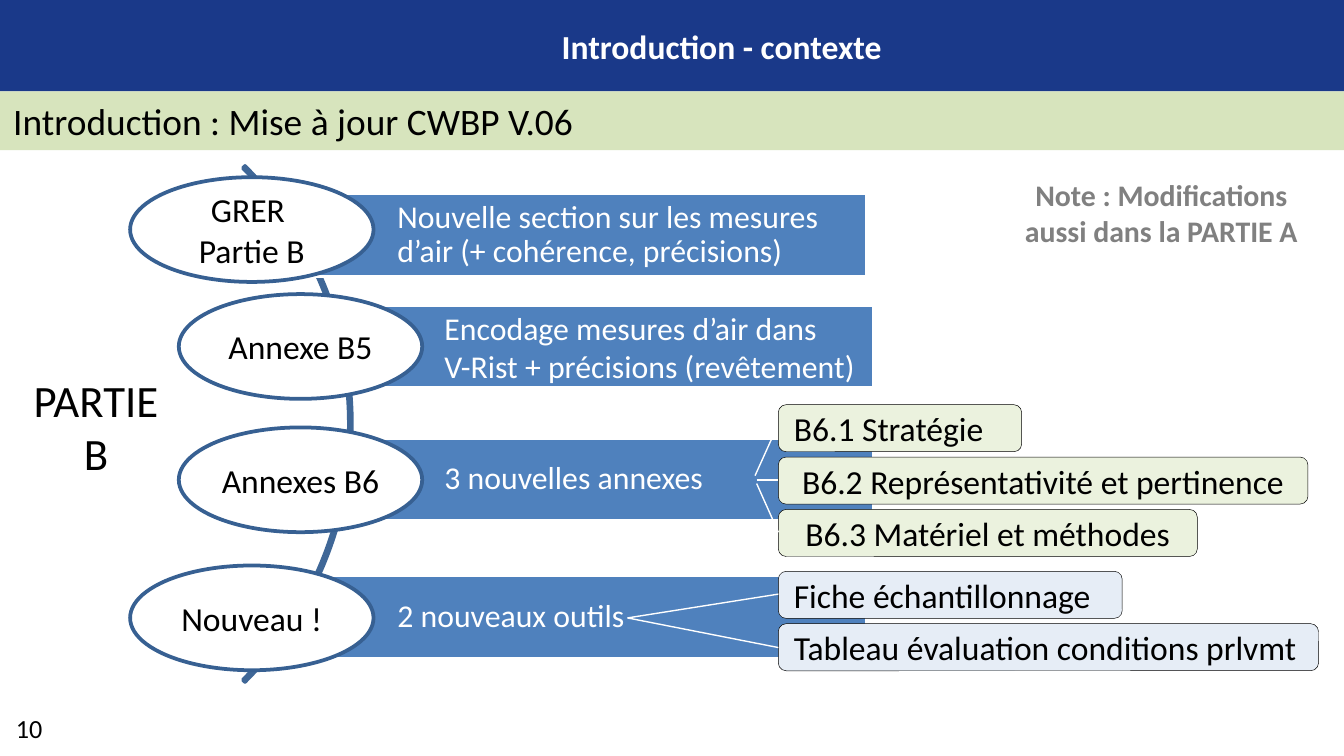
from dataclasses import dataclass

from lxml import etree
from pptx import Presentation
from pptx.dml.color import RGBColor
from pptx.enum.shapes import MSO_CONNECTOR as Connector, MSO_SHAPE as Preset
from pptx.enum.text import MSO_ANCHOR as Anchor, PP_ALIGN as Align
from pptx.oxml.ns import qn
from pptx.util import Cm, Pt

FONT = "Calibri"
BLACK, WHITE, NAVY, BLUE = "000000", "FFFFFF", "1A3989", "4F81BD"
LIME, GREEN, PALE_BLUE = "D7E4BD", "EBF2DE", "E6EDF6"
ARC_LINE, OVAL_LINE, GREY = "3F6797", "376092", "808080"

OVAL_WIDTH, OVAL_HEIGHT, BAR_HEIGHT = 4.6, 1.98, 1.57
CHIP_LEFT, CHIP_HEIGHT, CHIP_STEP = 14.71, 0.89, 0.99
NO_INSETS = (0, 0, 0, 0)
BAR_INSETS = (1.9, 0.12, 0.12, 0.12)


@dataclass
class Style:
    size: float
    color: str = BLACK
    bold: bool = False
    align: Align = Align.LEFT
    anchor: Anchor = Anchor.MIDDLE
    insets: tuple = (0.25, 0.13, 0.25, 0.13)
    spacing: float = 1.0
    wrap: bool = True


@dataclass
class Step:
    oval_left: float
    oval_top: float
    oval_lines: list
    bar_left: float
    bar_top: float
    bar_width: float
    bar_lines: list
    spacing: float = 0.9


@dataclass
class ChipGroup:
    top: float
    fill: str
    chips: list  # (label, width, alignment)


STEPS = [
    Step(2.46, 3.35, ["GRER ", "Partie B"], 5.61, 3.66, 10.77,
         ["Nouvelle section sur les mesures d’air (+ cohérence, précisions)"]),
    Step(3.38, 5.56, ["Annexe B5"], 6.5, 5.77, 10.01,
         ["Encodage mesures d’air dans", "V-Rist + précisions (revêtement)"], 1.0),
    Step(3.38, 8.08, ["Annexes B6"], 6.5, 8.28, 10.01, ["3 nouvelles annexes"]),
    Step(2.46, 10.69, ["Nouveau !"], 5.61, 10.88, 10.77, ["2 nouveaux outils"]),
]
CHIP_GROUPS = [
    ChipGroup(7.65, GREEN, [
        ("B6.1 Stratégie", 4.6, Align.LEFT),
        ("B6.2 Représentativité et pertinence", 10.01, Align.CENTER),
        ("B6.3 Matériel et méthodes", 7.92, Align.CENTER)]),
    ChipGroup(10.8, PALE_BLUE, [
        ("Fiche échantillonnage", 6.5, Align.LEFT),
        ("Tableau évaluation conditions prlvmt", 10.21, Align.LEFT)]),
]
BRANCHES = [
    (14.27, 8.99, 14.68, 8.08), (14.3, 9.07, 14.71, 9.07), (14.3, 9.14, 14.71, 10.06),
    (11.86, 11.68, 14.71, 11.23), (11.86, 11.68, 14.71, 12.24),
]


def rgb(value: str) -> RGBColor:
    return RGBColor.from_string(value)


def write(shape, lines: list, style: Style) -> None:
    frame = shape.text_frame
    frame.word_wrap = style.wrap
    frame.vertical_anchor = style.anchor
    (frame.margin_left, frame.margin_top,
     frame.margin_right, frame.margin_bottom) = map(Cm, style.insets)
    for index, line in enumerate(lines):
        paragraph = frame.add_paragraph() if index else frame.paragraphs[0]
        paragraph.alignment = style.align
        paragraph.line_spacing = style.spacing
        run = paragraph.add_run()
        run.text = line
        run.font.name = FONT
        run.font.size = Pt(style.size)
        run.font.bold = style.bold
        run.font.color.rgb = rgb(style.color)


def add_shape(slide, preset: Preset, box: tuple, fill: str = "",
              line: str = "", line_width: float = 0):
    shape = slide.shapes.add_shape(preset, *map(Cm, box))
    shape.shadow.inherit = False
    if fill:
        shape.fill.solid()
        shape.fill.fore_color.rgb = rgb(fill)
    else:
        shape.fill.background()
    if line:
        shape.line.color.rgb = rgb(line)
        shape.line.width = Pt(line_width)
    else:
        shape.line.fill.background()
    return shape


def add_text(slide, box: tuple, lines: list, style: Style) -> None:
    write(slide.shapes.add_textbox(*map(Cm, box)), lines, style)


def add_step(slide, step: Step) -> None:
    bar_box = (step.bar_left, step.bar_top, step.bar_width, BAR_HEIGHT)
    bar = add_shape(slide, Preset.RECTANGLE, bar_box, BLUE, WHITE, 2)
    write(bar, step.bar_lines,
          Style(17, WHITE, insets=BAR_INSETS, spacing=step.spacing))
    oval_box = (step.oval_left, step.oval_top, OVAL_WIDTH, OVAL_HEIGHT)
    oval = add_shape(slide, Preset.OVAL, oval_box, WHITE, OVAL_LINE, 2)
    write(oval, step.oval_lines, Style(18, align=Align.CENTER, insets=NO_INSETS))


def add_chips(slide, group: ChipGroup) -> None:
    for index, (label, width, align) in enumerate(group.chips):
        box = (CHIP_LEFT, group.top + index * CHIP_STEP, width, CHIP_HEIGHT)
        chip = add_shape(slide, Preset.ROUNDED_RECTANGLE, box, group.fill, BLACK, 0.25)
        write(chip, [label], Style(18, align=align))


def add_branch(slide, ends: tuple) -> None:
    branch = slide.shapes.add_connector(Connector.STRAIGHT, *map(Cm, ends))
    branch.line.color.rgb = rgb(WHITE)
    branch.line.width = Pt(0.75)
    etree.SubElement(branch._element.spPr, qn("a:effectLst"))


def main() -> None:
    presentation = Presentation()
    presentation.slide_width, presentation.slide_height = Cm(25.4), Cm(14.29)
    slide = presentation.slides.add_slide(presentation.slide_layouts[6])

    # Header, slide number and subtitle band
    add_shape(slide, Preset.RECTANGLE, (0, 0, 25.4, 1.73), NAVY)
    add_text(slide, (2.21, 0.36, 22.86, 1.02), ["Introduction - contexte"],
             Style(18, WHITE, True, Align.CENTER, Anchor.TOP))
    add_text(slide, (0.05, 13.34, 1.35, 0.86), ["10"],
             Style(14, anchor=Anchor.TOP, wrap=False))
    band = add_shape(slide, Preset.RECTANGLE, (0, 1.73, 25.4, 1.11), LIME)
    write(band, ["Introduction : Mise à jour CWBP V.06"], Style(20, anchor=Anchor.TOP))

    # Part label and arc
    part = add_shape(slide, Preset.ROUNDED_RECTANGLE, (0.2, 3.1, 3.23, 9.91))
    write(part, ["PARTIE B"], Style(24, align=Align.CENTER))
    arc = add_shape(slide, Preset.BLOCK_ARC, (-7.14, 1.12, 13.79, 13.79),
                    line=ARC_LINE, line_width=2)
    for index, value in enumerate((189, 27, 0.004)):
        arc.adjustments[index] = value

    # Steps along the arc
    for step in STEPS:
        add_step(slide, step)

    # Side note
    add_text(slide, (18.75, 3.21, 6.4, 2.11),
             ["Note : Modifications aussi dans la PARTIE A"],
             Style(16, GREY, True, Align.CENTER, Anchor.TOP))

    # Details and their branches
    for group in CHIP_GROUPS:
        add_chips(slide, group)
    for ends in BRANCHES:
        add_branch(slide, ends)

    presentation.save("out.pptx")


if __name__ == "__main__":
    main()
